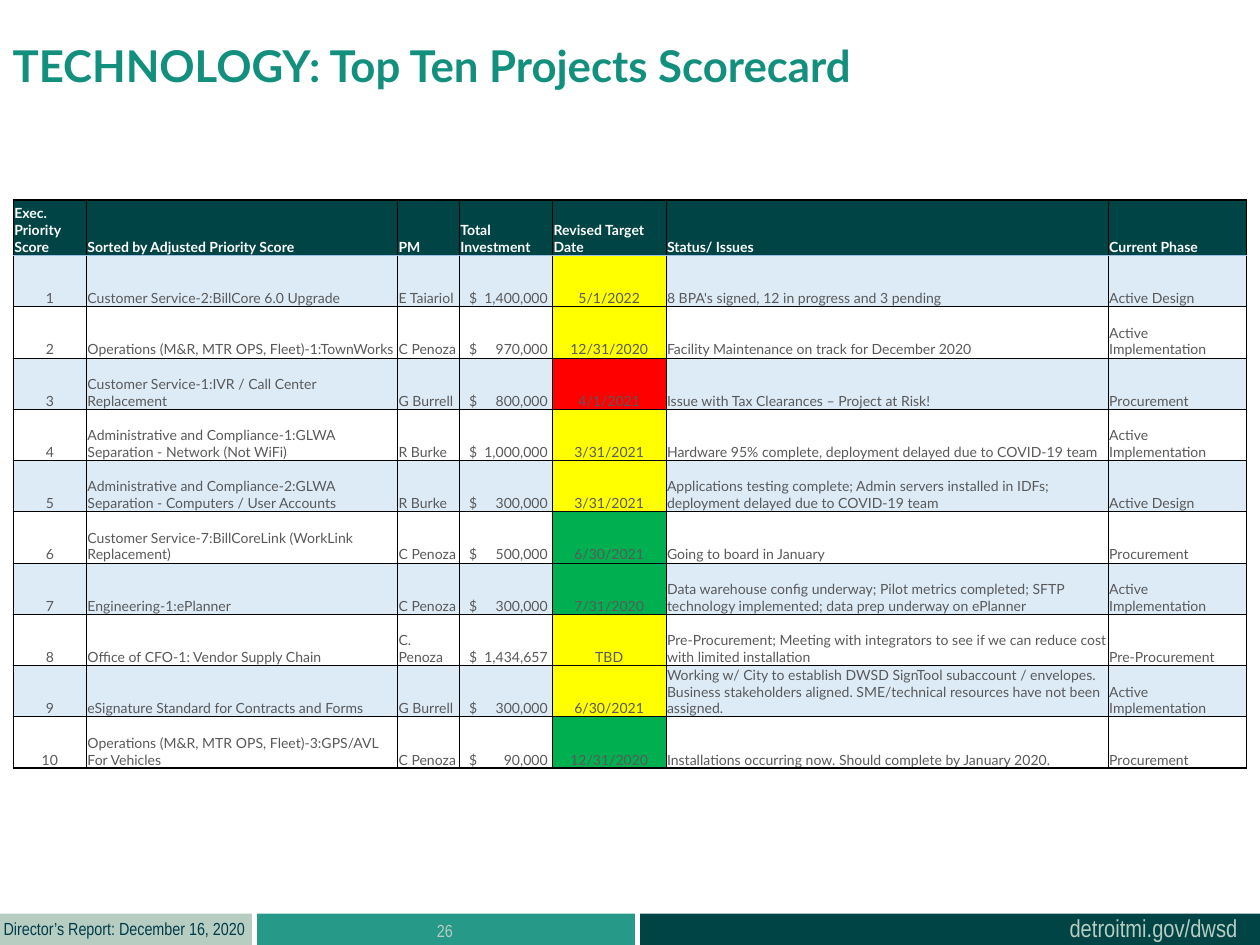
"""Build the technology scorecard slide with its table of ten projects."""
import pptx
import pptx.dml.color
import pptx.enum.text
import pptx.oxml
import pptx.oxml.ns
import pptx.util

Pt = pptx.util.Pt
Align = pptx.enum.text.PP_ALIGN
Anchor = pptx.enum.text.MSO_ANCHOR
space = pptx.oxml.ns.nsdecls("a")


def paint(color, code):
    color.rgb = pptx.dml.color.RGBColor.from_string(code)


def write(frame, text, size, face, code, bold=False, align=Align.LEFT):
    line = frame.paragraphs[0]
    line.alignment = align
    run = line.add_run()
    run.text = text
    run.font.size = Pt(size)
    run.font.name = face
    run.font.bold = bold
    paint(run.font.color, code)


deck = pptx.Presentation()
deck.slide_width = Pt(720)
deck.slide_height = Pt(540)
slide = deck.slides.add_slide(deck.slide_layouts[5])
shapes = slide.shapes

for left, width, code in [(146.9, 216, "279989"), (365.8, 354.2, "004445"), (0, 144, "B7CDC2")]:
    bar = shapes.add_shape(1, Pt(left), Pt(522), Pt(width), Pt(18))
    bar.shadow.inherit = False
    bar.fill.solid()
    paint(bar.fill.fore_color, code)
    bar.line.fill.background()

for left, top, width, height, text, size, code, wrap, align in [
    (604.1, 518.4, 111.6, 24.5, "detroitmi.gov/dwsd", 14, "B7CDC2", False, Align.LEFT),
    (-5, 521.3, 153.4, 19.4, "Director’s Report: December 16, 2020", 10, "003B49", False, Align.LEFT),
    (146.2, 522, 216, 28.8, "26", 10, "B7CDC2", True, Align.CENTER),
]:
    frame = shapes.add_textbox(Pt(left), Pt(top), Pt(width), Pt(height)).text_frame
    frame.word_wrap = wrap
    write(frame, text, size, "Arial Narrow", code, align=align)

title = shapes.title
title.left, title.top, title.width, title.height = Pt(0), Pt(18.7), Pt(546.5), Pt(55.4)
title.text_frame.vertical_anchor = Anchor.TOP
title.text_frame.auto_size = pptx.enum.text.MSO_AUTO_SIZE.NONE
write(title.text_frame, "TECHNOLOGY: Top Ten Projects Scorecard", 25, "Lato", "138F7E", True)

heads = ["Exec. Priority Score", "Sorted by Adjusted Priority Score", "PM", "Total Investment",
         "Revised Target Date", "Status/ Issues", "Current Phase"]
lights = {"yellow": "FFFF00", "red": "FF0000", "green": "00B050"}
tasks = [
    ("Customer Service-2:BillCore 6.0 Upgrade", "E Taiariol", "1,400,000", "5/1/2022", "yellow",
     "8 BPA's signed, 12 in progress and 3 pending", "Active Design"),
    ("Operations (M&R, MTR OPS, Fleet)-1:TownWorks", "C Penoza", "970,000", "12/31/2020", "yellow",
     "Facility Maintenance on track for December 2020", "Active Implementation"),
    ("Customer Service-1:IVR / Call Center Replacement", "G Burrell", "800,000", "4/1/2021", "red",
     "Issue with Tax Clearances – Project at Risk!", "Procurement"),
    ("Administrative and Compliance-1:GLWA Separation - Network (Not WiFi)", "R Burke",
     "1,000,000", "3/31/2021", "yellow",
     "Hardware 95% complete, deployment delayed due to COVID-19 team", "Active Implementation"),
    ("Administrative and Compliance-2:GLWA Separation - Computers / User Accounts", "R Burke",
     "300,000", "3/31/2021", "yellow",
     "Applications testing complete; Admin servers installed in IDFs; "
     "deployment delayed due to COVID-19 team", "Active Design"),
    ("Customer Service-7:BillCoreLink (WorkLink Replacement)", "C Penoza",
     "500,000", "6/30/2021", "green", "Going to board in January", "Procurement"),
    ("Engineering-1:ePlanner", "C Penoza", "300,000", "7/31/2020", "green",
     "Data warehouse config underway; Pilot metrics completed; SFTP "
     "technology implemented; data prep underway on ePlanner", "Active Implementation"),
    ("Office of CFO-1: Vendor Supply Chain", "C. Penoza", "1,434,657", "TBD", "yellow",
     "Pre-Procurement; Meeting with integrators to see if we can reduce cost "
     "with limited installation", "Pre-Procurement"),
    ("eSignature Standard for Contracts and Forms", "G Burrell", "300,000", "6/30/2021", "yellow",
     "Working w/ City to establish DWSD SignTool subaccount / envelopes. "
     "Business stakeholders aligned. SME/technical resources have not been assigned.",
     "Active Implementation"),
    ("Operations (M&R, MTR OPS, Fleet)-3:GPS/AVL For Vehicles", "C Penoza",
     "90,000", "12/31/2020", "green",
     "Installations occurring now. Should complete by January 2020.", "Procurement"),
]
rows = [heads]
for rank, (name, lead, cost, date, light, status, phase) in enumerate(tasks, 1):
    rows.append([str(rank), name, lead, f"\t$\t{cost}", date, status, phase])

widths = [41.8, 177.8, 35.3, 53.3, 64.8, 252.7, 79.2]
last = len(tasks)
table = shapes.add_table(len(rows), len(heads), Pt(7.6), Pt(114.3), Pt(704.9), Pt(324.7)).table
table.first_row = False
table.horz_banding = False
for column, width in zip(table.columns, widths):
    column.width = Pt(width)

for r, row in enumerate(rows):
    table.rows[r].height = Pt(29.3 if r else 31.7)
    for c, text in enumerate(row):
        cell = table.cell(r, c)
        cell.vertical_anchor = Anchor.BOTTOM
        cell.margin_left = cell.margin_right = cell.margin_top = Pt(0.6)
        cell.margin_bottom = Pt(0)
        edges = [
            ("L", "000000", 0.5 if c else 1),
            ("R", "000000", 1 if c == len(heads) - 1 else 0.5),
            ("T", "9BC2E6" if r == 1 else "000000", 0.5 if r else 1),
            ("B", "000000" if r else "9BC2E6", 1 if r == last else 0.5),
        ]
        for side, code, weight in edges:
            cell._tc.get_or_add_tcPr().append(pptx.oxml.parse_xml(
                f'<a:ln{side} {space} w="{Pt(weight)}"><a:solidFill>'
                f'<a:srgbClr val="{code}"/></a:solidFill></a:ln{side}>'))
        if r == 0:
            shade = "004445"
        elif c == 4:
            shade = lights[tasks[r - 1][4]]
        else:
            shade = "DDEBF7" if r % 2 else None
        if shade:
            cell.fill.solid()
            paint(cell.fill.fore_color, shade)
        else:
            cell.fill.background()
        if r and c == 3:
            cell.text_frame.paragraphs[0]._p.get_or_add_pPr().append(pptx.oxml.parse_xml(
                f'<a:tabLst {space}><a:tab pos="{Pt(5)}" algn="l"/>'
                f'<a:tab pos="{Pt(50)}" algn="r"/></a:tabLst>'))
        align = Align.CENTER if r and c in (0, 4) else Align.LEFT
        write(cell.text_frame, text, 8, "Lato", "595959" if r else "FFFFFF", r == 0, align)

deck.save("out.pptx")
